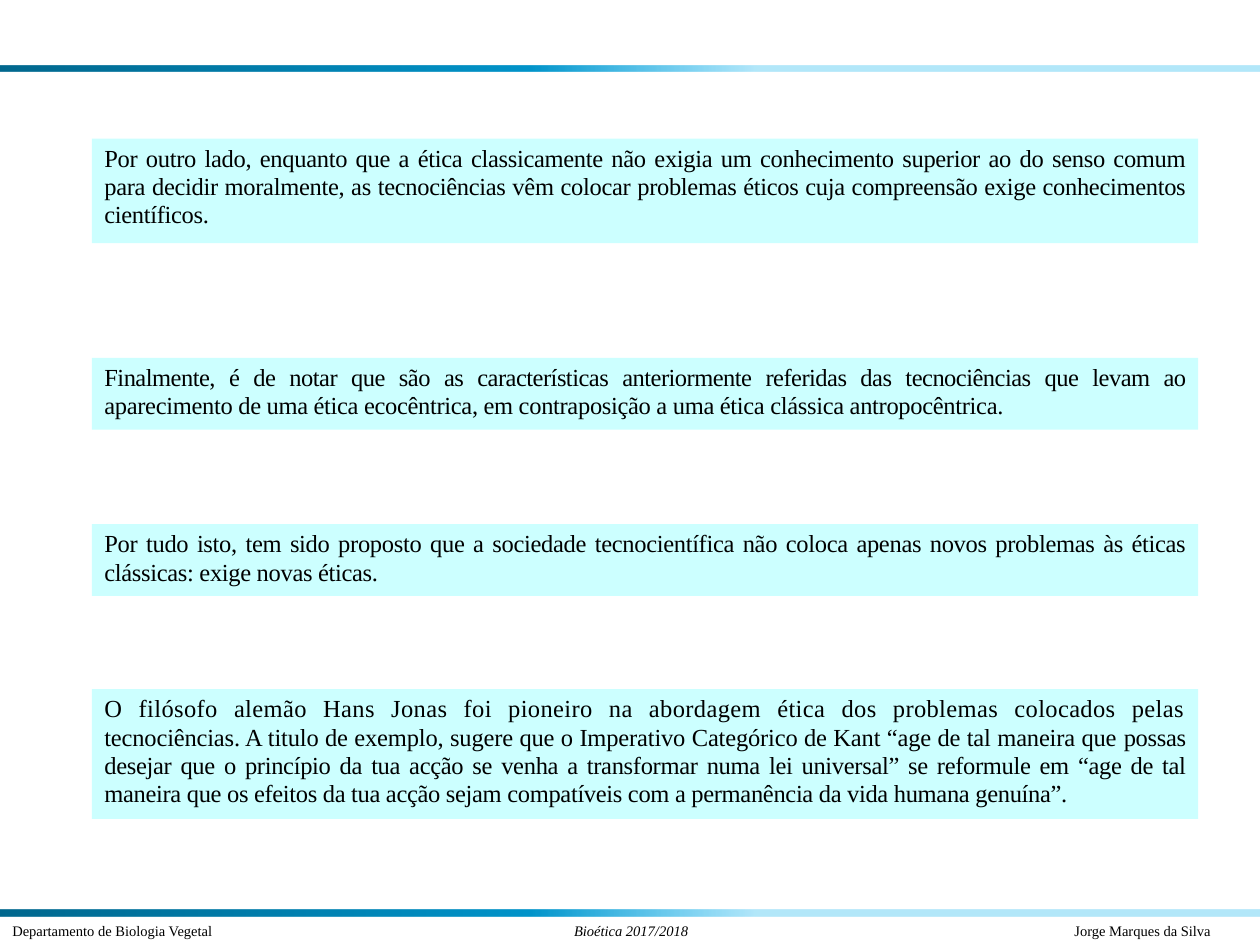
from lxml.etree import SubElement
from pptx import Presentation
from pptx.dml.color import RGBColor
from pptx.enum.shapes import MSO_SHAPE
from pptx.enum.text import MSO_ANCHOR, PP_ALIGN
from pptx.oxml.ns import qn
from pptx.util import Inches, Pt

WIDTH, HEIGHT = Inches(10), Inches(7.5)
FONT = "Times New Roman"
BLACK = RGBColor(0x00, 0x00, 0x00)
PALE_CYAN = RGBColor(0xCC, 0xFF, 0xFF)
DEEP_BLUE = RGBColor(0x00, 0x68, 0x8E)
MID_BLUE = RGBColor(0x00, 0x94, 0xCA)
SKY_BLUE = RGBColor(0x00, 0xB0, 0xF0)

# Position %, colour, opacity %
BAR_STOPS = [(0, DEEP_BLUE, 100), (42, MID_BLUE, 100), (60, SKY_BLUE, 30)]
BAR_TOPS = [0.52, 7.22]

PANEL_LEFT, PANEL_WIDTH = Inches(0.73), Inches(8.78)
MARGIN = Inches(0.1)

# Top, height, and runs as (text, letter spacing in points)
PANELS = [
    (1.1, 0.83, [
        ("Por outro lado, enquanto que a ética classicamente não exigia um "
         "conhecimento superior ao do senso comum para decidir moralmente, as "
         "tecnociências vêm colocar problemas éticos cuja compreensão exige "
         "conhecimentos científicos.", -0.2)]),
    (2.84, 0.57, [
        ("Finalmente, é de notar que são as características anteriormente "
         "referidas das tecnociências que levam ao ", -0.3),
        ("aparecimento de uma ética ecocêntrica, em contraposição a uma ética "
         "clássica antropocêntrica.", -0.2)]),
    (4.16, 0.57, [
        ("Por tudo isto, tem sido proposto que a sociedade tecnocientífica não "
         "coloca apenas novos problemas às éticas clássicas: exige novas "
         "éticas.", -0.2)]),
    (5.47, 1.03, [
        ("O filósofo alemão Hans Jonas foi pioneiro na abordagem ética dos "
         "problemas colocados pelas ", 0.2),
        ("tecnociências. A titulo de exemplo, sugere que o Imperativo "
         "Categórico de Kant “age de tal maneira que ", -0.1),
        ("possas desejar que o princípio da tua acção se venha a transformar "
         "numa lei universal” se reformule em “age de tal maneira que os "
         "efeitos da tua acção sejam compatíveis com a permanência da vida "
         "humana genuína”.", -0.2)]),
]

# Text, italic
FOOTER = [("Departamento de Biologia Vegetal", False),
          ("\tBioética 2017/2018", True),
          ("\tJorge Marques da Silva", False)]
FOOTER_TABS = [("ctr", 4.91), ("r", 9.51)]


def add_rectangle(slide, left, top, width, height):
    shape = slide.shapes.add_shape(MSO_SHAPE.RECTANGLE, left, top, width, height)
    shape.shadow.inherit = False
    shape.line.fill.background()
    return shape


def add_gradient_bar(slide, top):
    shape = add_rectangle(slide, 0, Inches(top), WIDTH, Inches(0.05))
    shape.fill.gradient()
    shape.fill.gradient_angle = 0
    stop_list = shape._element.spPr.find(".//" + qn("a:gsLst"))
    for stop in list(stop_list):
        stop_list.remove(stop)
    for position, color, opacity in BAR_STOPS:
        stop = SubElement(stop_list, qn("a:gs"), pos=str(position * 1000))
        value = SubElement(stop, qn("a:srgbClr"), val=str(color))
        if opacity < 100:
            SubElement(value, qn("a:alpha"), val=str(opacity * 1000))


def prepare_text(shape):
    frame = shape.text_frame
    frame.word_wrap = True
    frame.vertical_anchor = MSO_ANCHOR.TOP
    frame.margin_left = frame.margin_right = MARGIN
    frame.margin_top, frame.margin_bottom = Inches(0.05), 0
    return frame.paragraphs[0]


def set_font(paragraph, size):
    paragraph.font.name = FONT
    paragraph.font.size = Pt(size)
    paragraph.font.color.rgb = BLACK


def add_panel(slide, top, height, runs):
    shape = add_rectangle(slide, PANEL_LEFT, Inches(top), PANEL_WIDTH, Inches(height))
    shape.fill.solid()
    shape.fill.fore_color.rgb = PALE_CYAN
    paragraph = prepare_text(shape)
    paragraph.alignment = PP_ALIGN.JUSTIFY
    paragraph.line_spacing = 0.96
    set_font(paragraph, 14)
    for text, spacing in runs:
        run = paragraph.add_run()
        run.text = text
        run._r.get_or_add_rPr().set("spc", str(round(spacing * 100)))


def add_footer(slide):
    box = slide.shapes.add_textbox(0, Inches(7.27), WIDTH, Inches(0.19))
    paragraph = prepare_text(box)
    paragraph.alignment = PP_ALIGN.LEFT
    tab_list = SubElement(paragraph._p.get_or_add_pPr(), qn("a:tabLst"))
    for alignment, position in FOOTER_TABS:
        SubElement(tab_list, qn("a:tab"), pos=str(Inches(position)), algn=alignment)
    set_font(paragraph, 8.3)
    for text, italic in FOOTER:
        run = paragraph.add_run()
        run.text = text
        run.font.italic = italic


def main():
    presentation = Presentation()
    presentation.slide_width, presentation.slide_height = WIDTH, HEIGHT
    slide = presentation.slides.add_slide(presentation.slide_layouts[6])

    # Footer and the two bars that frame the page
    add_footer(slide)
    for top in BAR_TOPS:
        add_gradient_bar(slide, top)

    # Text panels
    for top, height, runs in PANELS:
        add_panel(slide, top, height, runs)

    presentation.save("out.pptx")


if __name__ == "__main__":
    main()
